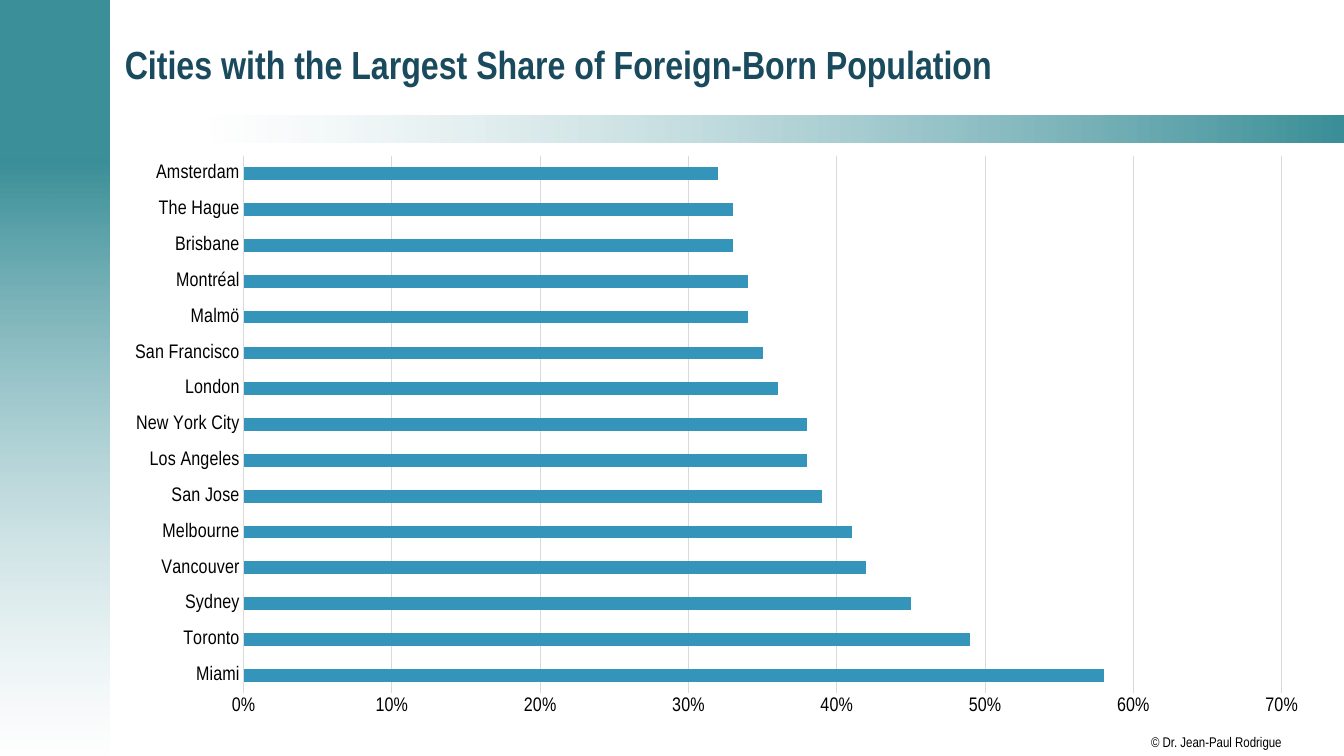
from lxml import etree
from pptx import Presentation
from pptx.chart.data import CategoryChartData
from pptx.dml.color import RGBColor
from pptx.enum import chart as ch, shapes, text
from pptx.oxml.ns import qn
from pptx.util import Pt

TITLE = "Cities with the Largest Share of Foreign-Born Population"
CREDIT = "© Dr. Jean-Paul Rodrigue"
SHARES = {
    "Miami": 0.58, "Toronto": 0.49, "Sydney": 0.45, "Vancouver": 0.42,
    "Melbourne": 0.41, "San Jose": 0.39, "Los Angeles": 0.38,
    "New York City": 0.38, "London": 0.36, "San Francisco": 0.35,
    "Malmö": 0.34, "Montréal": 0.34, "Brisbane": 0.33, "The Hague": 0.33,
    "Amsterdam": 0.32,
}


class Theme:
    font = "Arial Narrow"
    title_size, chart_size, credit_size = 28, 14, 10
    teal, white, black = "3A8F98", "FFFFFF", "000000"
    title, bar, grid = "1A4A5D", "3494BA", "D9D9D9"


WIDTH, HEIGHT = 960, 540
SIDE_LEFT, SIDE_TOP, SIDE_WIDTH = -1.4, -0.7, 79.9
SIDE_SPLIT = 113
BAND_LEFT, BAND_TOP, BAND_HEIGHT = 150.3, 82.8, 18.9


def rgb(value):
    return RGBColor.from_string(value)


def style_font(font, size, color, bold=False):
    font.name, font.size, font.bold = Theme.font, Pt(size), bold
    font.color.rgb = rgb(color)


def add_text(slide, box, content, size, color, bold=False, wrap=True,
             margin=(0, 0), anchor=text.MSO_ANCHOR.TOP,
             fit=text.MSO_AUTO_SIZE.NONE):
    tf = slide.shapes.add_textbox(*map(Pt, box)).text_frame
    tf.word_wrap, tf.auto_size, tf.vertical_anchor = wrap, fit, anchor
    tf.margin_left = tf.margin_right = Pt(margin[0])
    tf.margin_top = tf.margin_bottom = Pt(margin[1])
    r = tf.paragraphs[0].add_run()
    r.text = content
    style_font(r.font, size, color, bold)


def add_panel(slide, box, stops=None, angle=0):
    """Add a teal panel, or a gradient of (colour, opacity percent) stops."""
    sp = slide.shapes.add_shape(shapes.MSO_SHAPE.RECTANGLE, *map(Pt, box))
    sp.shadow.inherit = False
    sp.line.fill.background()
    if not stops:
        sp.fill.solid()
        sp.fill.fore_color.rgb = rgb(Theme.teal)
        return
    sp.fill.gradient()
    sp.fill.gradient_angle = angle
    for stop, position, (color, _) in zip(sp.fill.gradient_stops, (0, 1), stops):
        stop.position = position
        stop.color.rgb = rgb(color)
    colors = sp._element.spPr.iter(qn("a:srgbClr"))
    for node, (_, opacity) in zip(list(colors), stops):
        if opacity < 100:
            etree.SubElement(node, qn("a:alpha")).set("val", str(opacity * 1000))


def add_share_chart(slide, box):
    data = CategoryChartData(number_format="0%")
    data.categories = list(SHARES)
    data.add_series("Series 1", list(SHARES.values()))
    chart = slide.shapes.add_chart(
        ch.XL_CHART_TYPE.BAR_CLUSTERED, *map(Pt, box), data).chart
    chart.has_legend = chart.has_title = False
    style_font(chart.font, Theme.chart_size, Theme.black)

    plot = chart.plots[0]
    plot.gap_width, plot.vary_by_categories = 182, False
    fill = plot.series[0].format.fill
    fill.solid()
    fill.fore_color.rgb = rgb(Theme.bar)

    cities, shares = chart.category_axis, chart.value_axis
    for axis in (cities, shares):
        axis.major_tick_mark = axis.minor_tick_mark = ch.XL_TICK_MARK.NONE
        style_font(axis.tick_labels.font, Theme.chart_size, Theme.black)
    shares.minimum_scale, shares.maximum_scale, shares.major_unit = 0, 0.7, 0.1
    shares.tick_labels.number_format = "0%"
    shares.tick_labels.number_format_is_linked = False
    shares.has_major_gridlines = True
    shares.format.line.fill.background()
    for line in (cities.format.line, shares.major_gridlines.format.line):
        line.color.rgb = rgb(Theme.grid)
        line.width = Pt(0.75)


def main():
    prs = Presentation()
    prs.slide_width, prs.slide_height = Pt(WIDTH), Pt(HEIGHT)
    slide = prs.slides.add_slide(prs.slide_layouts[6])

    add_panel(slide, (SIDE_LEFT, SIDE_SPLIT, SIDE_WIDTH, HEIGHT - SIDE_SPLIT),
              [(Theme.teal, 100), (Theme.white, 51)], angle=270)
    add_panel(slide, (BAND_LEFT, BAND_TOP, WIDTH - BAND_LEFT, BAND_HEIGHT),
              [(Theme.white, 50), (Theme.teal, 100)])
    add_text(slide, (822.2, 524.2, 94.3, 12.2), CREDIT, Theme.credit_size,
             Theme.black, wrap=False, fit=text.MSO_AUTO_SIZE.SHAPE_TO_FIT_TEXT)
    add_panel(slide, (SIDE_LEFT, SIDE_TOP, SIDE_WIDTH, SIDE_SPLIT - SIDE_TOP))
    add_text(slide, (82.1, 7.9, 861.8, 74.9), TITLE, Theme.title_size,
             Theme.title, bold=True, margin=(7.2, 3.6),
             anchor=text.MSO_ANCHOR.MIDDLE)
    add_share_chart(slide, (79.2, 103, 865.4, 416.9))
    prs.save("out.pptx")


if __name__ == "__main__":
    main()
